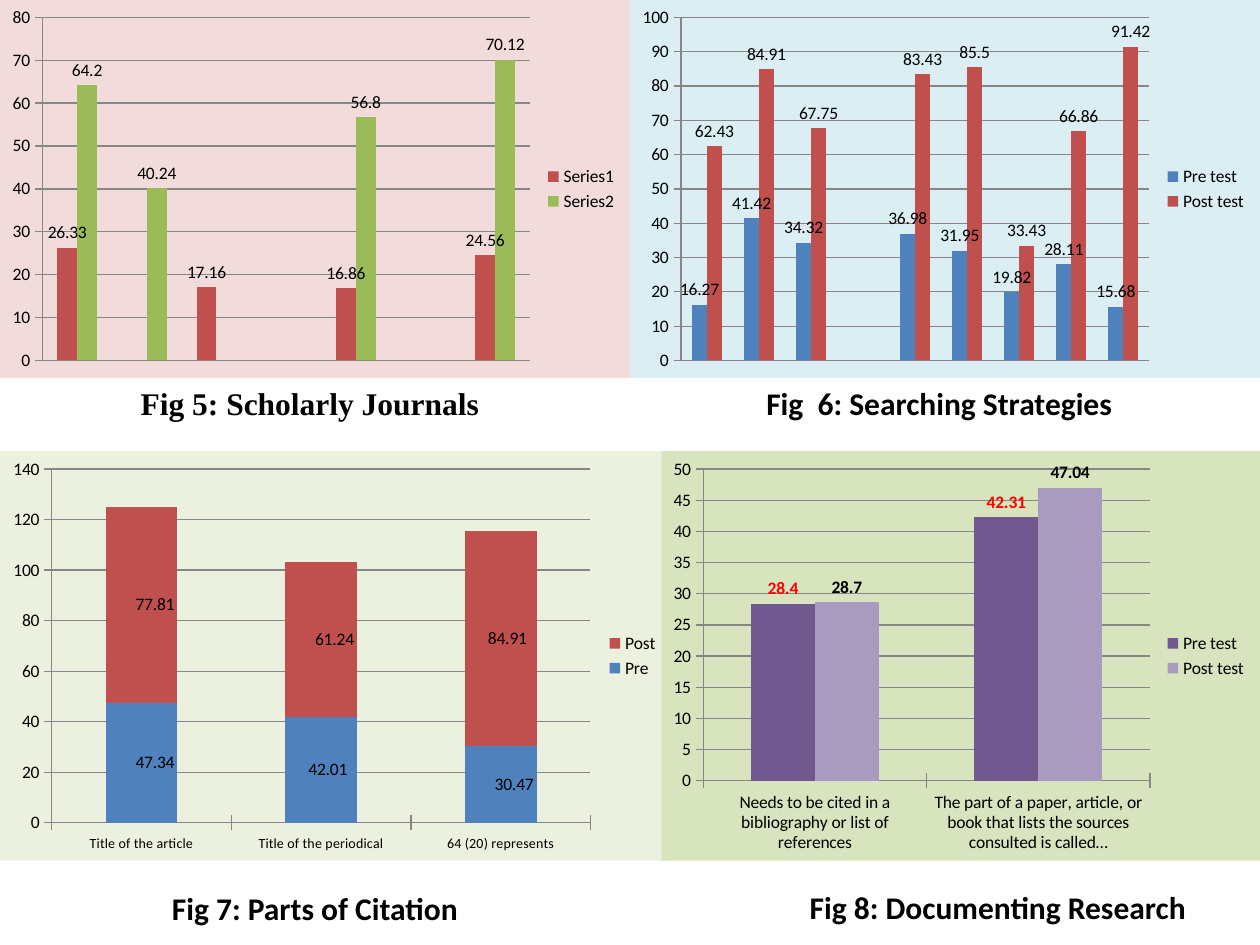
from lxml import etree
from pptx import Presentation
from pptx.chart.data import CategoryChartData
from pptx.dml.color import RGBColor
from pptx.enum.chart import XL_CHART_TYPE as CT, XL_LABEL_POSITION as LP
from pptx.enum.chart import XL_LEGEND_POSITION, XL_TICK_MARK as TM
from pptx.enum.text import MSO_AUTO_SIZE, PP_ALIGN
from pptx.oxml import parse_xml
from pptx.oxml.ns import nsdecls, qn
from pptx.util import Inches, Pt


def rgb(h):
    return RGBColor.from_string(h)


def add_text(text, x, y, w, h, font="Calibri", size=18, color="000000"):
    tf = s.shapes.add_textbox(Inches(x), Inches(y), Inches(w), Inches(h)).text_frame
    tf.word_wrap = True
    tf.auto_size = MSO_AUTO_SIZE.SHAPE_TO_FIT_TEXT
    p = tf.paragraphs[0]
    p.alignment = PP_ALIGN.CENTER
    r = p.add_run()
    r.text = text
    r.font.name, r.font.size, r.font.bold = font, Pt(size), True
    r.font.color.rgb = rgb(color)


prs = Presentation()
prs.slide_width, prs.slide_height = Inches(10), Inches(7.5)
s = prs.slides.add_slide(prs.slide_layouts[6])

charts = [
    dict(at=(0, 0, 5, 3), fill="F2DCDB", cats=list("1234567"), axis=False,
         series=[("Series1", "C0504D", [26.33, None, 17.16, None, 16.86, None, 24.56]),
                 ("Series2", "9BBB59", [64.2, 40.24, None, None, 56.8, None, 70.12])]),
    dict(at=(5, 0, 5, 3), fill="DBEEF4", cats=list("123456789"), axis=False,
         series=[("Pre test", "4F81BD",
                  [16.27, 41.42, 34.32, None, 36.98, 31.95, 19.82, 28.11, 15.68]),
                 ("Post test", "C0504D",
                  [62.43, 84.91, 67.75, None, 83.43, 85.5, 33.43, 66.86, 91.42])]),
    dict(at=(0, 3.58, 5.33, 3.25), fill="EBF1DE", type=CT.COLUMN_STACKED, cat_size=8,
         cats=["Title of the article", "Title of the periodical", "64 (20) represents"],
         series=[("Pre", "4F81BD", [47.34, 42.01, 30.47]),
                 ("Post", "C0504D", [77.81, 61.24, 84.91])],
         shifts=[[0.02, 0.01, 0.02], [0.02, 0.02, 0.01]]),
    dict(at=(5.25, 3.58, 4.75, 3.25), fill="D7E4BD", bold=True,
         label_colors=["FF0000", "000000"],
         cats=["Needs to be cited in a bibliography or list of references",
               "The part of a paper, article, or book that lists the sources consulted is called…"],
         series=[("Pre test", "71588F", [28.4, 42.31]),
                 ("Post test", "A99BBD", [28.7, 47.04])]),
]

for c in charts:
    data = CategoryChartData()
    data.categories = c["cats"]
    for name, color, values in c["series"]:
        data.add_series(name, values)
    kind = c.get("type", CT.COLUMN_CLUSTERED)
    stacked = kind == CT.COLUMN_STACKED
    chart = s.shapes.add_chart(kind, *map(Inches, c["at"]), data).chart
    chart.has_title = False
    chart.font.name, chart.font.size = "Calibri", Pt(10)
    chart.font.color.rgb = rgb("000000")
    chart._chartSpace.find(qn("c:txPr")).addprevious(parse_xml(
        f'<c:spPr {nsdecls("c", "a")}><a:solidFill><a:srgbClr val="{c["fill"]}"/>'
        '</a:solidFill><a:ln><a:noFill/></a:ln></c:spPr>'))
    chart.has_legend = True
    chart.legend.position = XL_LEGEND_POSITION.RIGHT
    chart.legend.include_in_layout = False

    cat, val = chart.category_axis, chart.value_axis
    cat.visible = c.get("axis", True)
    cat.tick_labels.font.size = Pt(c.get("cat_size", 10))
    val.has_major_gridlines = True
    for line in (cat.format.line, val.format.line, val.major_gridlines.format.line):
        line.color.rgb = rgb("868686")
        line.width = Pt(0.75)
    for axis in (cat, val):
        axis.major_tick_mark, axis.minor_tick_mark = TM.CROSS, TM.NONE

    plot = chart.plots[0]
    plot.vary_by_categories = False
    plot.gap_width = 150
    plot.overlap = 100 if stacked else 0
    for i, (ser, (name, color, values)) in enumerate(zip(plot.series, c["series"])):
        ser.format.fill.solid()
        ser.format.fill.fore_color.rgb = rgb(color)
        labels = ser.data_labels
        labels.show_value = True
        labels.position = LP.CENTER if stacked else LP.OUTSIDE_END
        labels.font.size = Pt(10)
        labels.font.bold = c.get("bold", False)
        labels.font.color.rgb = rgb(c.get("label_colors", ["000000"] * 2)[i])
        if stacked:
            for j, dx in enumerate(c["shifts"][i]):
                ser.points[j].data_label.position = LP.CENTER
                idx = ser._element.findall(".//" + qn("c:dLbl"))[j].find(qn("c:idx"))
                layout = etree.Element(qn("c:layout"))
                manual = etree.SubElement(layout, qn("c:manualLayout"))
                etree.SubElement(manual, qn("c:x")).set("val", str(dx))
                etree.SubElement(manual, qn("c:y")).set("val", "0")
                idx.addnext(layout)

add_text("Fig 5: Scholarly Journals", 0, 3, 4.92, 0.71, font="Times New Roman")
add_text("Fig  6: Searching Strategies", 5.58, 3, 3.75, 0.4)
add_text("Fig 7: Parts of Citation", 0.25, 7.01, 4.5, 0.4)
add_text("Fig 8: Documenting Research", 5.67, 7, 4.5, 0.4)

prs.save("out.pptx")
